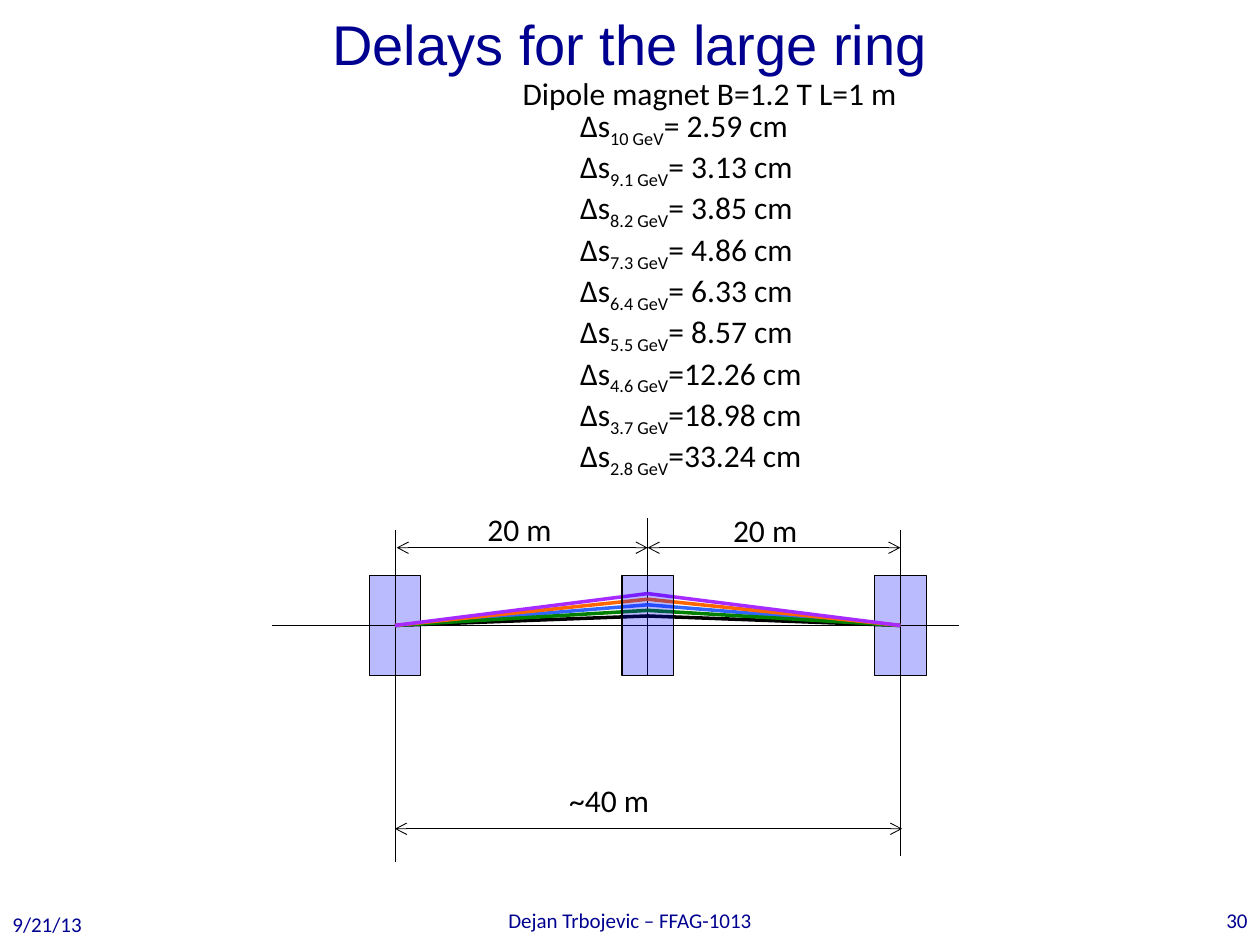
import lxml.etree
import pptx
import pptx.dml.color
import pptx.enum.shapes
import pptx.enum.text
import pptx.oxml.ns
import pptx.util

Pt = pptx.util.Pt
ALIGN = pptx.enum.text.PP_ALIGN
MIDDLE = pptx.enum.text.MSO_ANCHOR.MIDDLE

BLACK, NAVY, MAGNET_BLUE = "000000", "000090", "0000FF"
BODY = {"name": "Calibri", "size": Pt(18)}
FOOTER = {"name": "Calibri", "size": Pt(12)}
TITLE = {"name": "Arial", "size": Pt(32)}

# Energy in GeV, delay text, box width
DELAYS = [
    ("10", "= 2.59 cm", 139), ("9.1", "= 3.13 cm", 142.5), ("8.2", "= 3.85 cm", 142.5),
    ("7.3", "= 4.86 cm", 142.5), ("6.4", "= 6.33 cm", 142.5), ("5.5", "= 8.57 cm", 142.5),
    ("4.6", "=12.26 cm", 147.6), ("3.7", "=18.98 cm", 147.6), ("2.8", "=33.24 cm", 152),
]
DELAY_TOP, DELAY_PITCH = 56.9, 23.6

LEFT_X, MIDDLE_X, RIGHT_X = (225.7 + 144.4 * i for i in range(3))
MAGNET_WIDTH, MAGNET_HEIGHT = 29.5, 57
AXIS_Y = 357.4
MAGNET_TOP = AXIS_Y - MAGNET_HEIGHT / 2
# Colour and step of the peak above the lowest orbit, back to front
ORBITS = [(BLACK, 0), ("3366FF", 2), ("008000", 1), ("FF6600", 3), ("A72BFF", 4)]
LOWEST_PEAK, PEAK_STEP = 352, 3.2


def rgb(color):
    return pptx.dml.color.RGBColor.from_string(color)


def add_child(parent, tag, **attributes):
    return lxml.etree.SubElement(parent, pptx.oxml.ns.qn(tag), attributes)


def add_span(para, text, color, style, baseline=None):
    span = para.add_run()
    span.text = text
    for name, value in style.items():
        setattr(span.font, name, value)
    span.font.color.rgb = rgb(color)
    if baseline:
        span.font._element.set("baseline", baseline)


def add_label(slide, left, top, width, spans):
    """Add a one-line body text box; spans are (text, baseline) pairs."""
    box = slide.shapes.add_textbox(Pt(left), Pt(top), Pt(width), Pt(29))
    frame = box.text_frame
    frame.word_wrap = False
    frame.auto_size = pptx.enum.text.MSO_AUTO_SIZE.SHAPE_TO_FIT_TEXT
    for text, baseline in spans:
        add_span(frame.paragraphs[0], text, BLACK, BODY, baseline)


def add_footer(slide, left, top, width, text, align):
    frame = slide.shapes.add_textbox(Pt(left), Pt(top), Pt(width), Pt(28.8)).text_frame
    frame.word_wrap = True
    frame.vertical_anchor = MIDDLE
    frame.paragraphs[0].alignment = align
    add_span(frame.paragraphs[0], text, NAVY, FOOTER)


def format_title(slide, text):
    title = slide.shapes.title
    box = {"left": 0, "top": 0, "width": Pt(720), "height": Pt(49.7)}
    for name, value in box.items():
        setattr(title, name, value)
    title.text_frame.vertical_anchor = MIDDLE
    para = title.text_frame.paragraphs[0]
    para.alignment = ALIGN.CENTER
    add_span(para, text, NAVY, TITLE)


def add_line(slide, x1, y1, x2, y2, color=BLACK, weight=0.5, arrows=False):
    line = slide.shapes.add_connector(
        pptx.enum.shapes.MSO_CONNECTOR.STRAIGHT, Pt(x1), Pt(y1), Pt(x2), Pt(y2))
    line.line.color.rgb = rgb(color)
    line.line.width = Pt(weight)
    if arrows:
        outline = line.line._get_or_add_ln()
        for tag in ("a:headEnd", "a:tailEnd"):
            add_child(outline, tag, type="arrow")
    add_child(line._element.spPr, "a:effectLst")
    return line


def add_magnet(slide, center):
    magnet = slide.shapes.add_shape(
        pptx.enum.shapes.MSO_SHAPE.RECTANGLE, Pt(center - MAGNET_WIDTH / 2),
        Pt(MAGNET_TOP), Pt(MAGNET_WIDTH), Pt(MAGNET_HEIGHT))
    magnet.shadow.inherit = False
    magnet.fill.solid()
    magnet.fill.fore_color.rgb = rgb(MAGNET_BLUE)
    fill = magnet._element.spPr.find(pptx.oxml.ns.qn("a:solidFill"))
    add_child(fill[0], "a:alpha", val="27000")
    magnet.line.color.rgb = rgb(BLACK)
    magnet.line.width = Pt(0.75)
    return magnet


def add_dimension(slide, x1, x2, y, text, label_box):
    add_line(slide, x1, y, x2, y, arrows=True)
    add_label(slide, *label_box, [(text, None)])


def add_ring_section(slide):
    for x in (LEFT_X, RIGHT_X):
        add_magnet(slide, x)
    add_line(slide, 155.5, AXIS_Y, 548, AXIS_Y)
    add_line(slide, LEFT_X, 303, LEFT_X, 492.5)
    add_line(slide, RIGHT_X, 303, RIGHT_X, 489)
    center_line = add_line(slide, MIDDLE_X, 296, MIDDLE_X, MAGNET_TOP + MAGNET_HEIGHT)
    for color, step in ORBITS:
        for x in (LEFT_X, RIGHT_X):
            add_line(slide, x, AXIS_Y, MIDDLE_X, LOWEST_PEAK - PEAK_STEP * step, color, 2)
    center_line.end_connect(add_magnet(slide, MIDDLE_X), 2)

    add_dimension(slide, LEFT_X + 1, MIDDLE_X, 313, "20 m", (271.4, 288, 51.8))
    add_dimension(slide, MIDDLE_X, RIGHT_X, 313, "20 m", (411.8, 288.7, 51.8))
    add_dimension(slide, LEFT_X, RIGHT_X + 1, 473.6, "~40 m", (318.2, 442.8, 60.5))


def main():
    deck = pptx.Presentation()
    deck.slide_width, deck.slide_height = Pt(720), Pt(540)
    slide = deck.slides.add_slide(deck.slide_layouts[5])

    format_title(slide, "Delays for the large ring")
    add_label(slide, 291.6, 38.9, 230.4, [("Dipole magnet B=1.2 T L=1 m", None)])
    for row, (energy, delay, width) in enumerate(DELAYS):
        spans = [("Δs", None), (f"{energy} GeV", "-25000"), (delay, None)]
        add_label(slide, 324.4, DELAY_TOP + DELAY_PITCH * row, width, spans)
    add_ring_section(slide)

    add_footer(slide, 0, 513.4, 168, "9/21/13", ALIGN.LEFT)
    add_footer(slide, 246, 511.2, 228, "Dejan Trbojevic – FFAG-1013", ALIGN.CENTER)
    add_footer(slide, 552, 511.2, 168, "30", ALIGN.RIGHT)
    deck.save("out.pptx")


if __name__ == "__main__":
    main()
